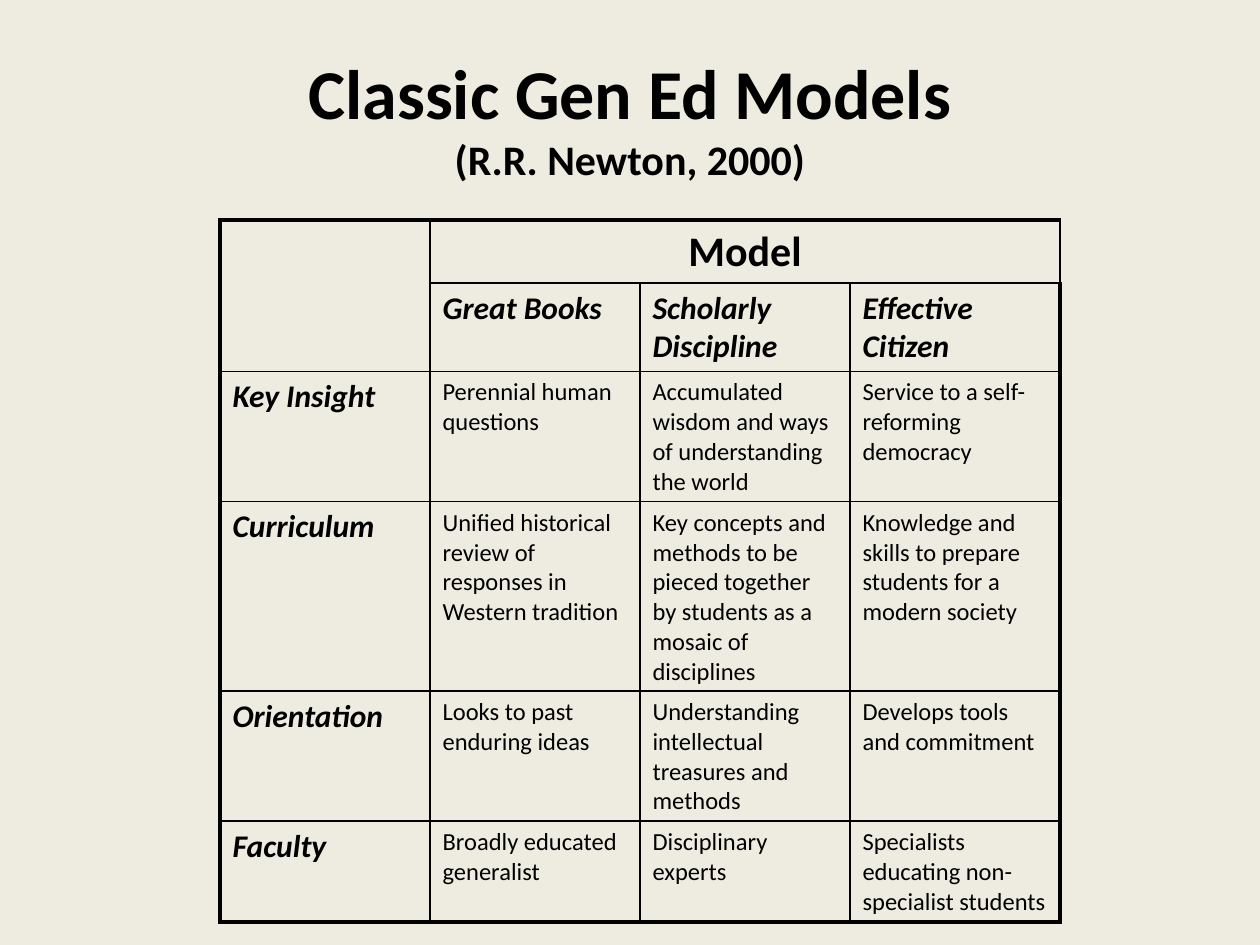
from lxml import etree
from pptx import Presentation
from pptx.dml.color import RGBColor
from pptx.enum.text import MSO_ANCHOR, PP_ALIGN
from pptx.oxml.ns import qn
from pptx.util import Emu, Pt

CENTER, LEFT = PP_ALIGN.CENTER, PP_ALIGN.LEFT
MIDDLE = MSO_ANCHOR.MIDDLE
PX = 914400 // 126
FONT = "Calibri"
COLORS = {"background": "EEECE1", "ink": "000000"}
THIN, THICK = 1, 2.25
COL_WIDTH = 210
ROW_HEIGHTS = [63, 88, 130, 189, 130, 101]
MODELS = [
    ["", "Model", "", ""],
    ["", "Great Books", "Scholarly Discipline", "Effective Citizen"],
    ["Key Insight", "Perennial human questions",
     "Accumulated wisdom and ways of understanding the world",
     "Service to a self-reforming democracy"],
    ["Curriculum", "Unified historical review of responses in Western tradition",
     "Key concepts and methods to be pieced together by students as a mosaic of disciplines",
     "Knowledge and skills to prepare students for a modern society"],
    ["Orientation", "Looks to past enduring ideas",
     "Understanding intellectual treasures and methods",
     "Develops tools and commitment"],
    ["Faculty", "Broadly educated generalist", "Disciplinary experts",
     "Specialists educating non-specialist students"],
]


def px(n):
    """Turn pixels into EMU."""
    return Emu(n * PX)


def rgb(name):
    """Look up a named colour."""
    return RGBColor.from_string(COLORS[name])


def add_run(p, text, size, bold=True, italic=False):
    """Add one formatted run to a paragraph."""
    r = p.add_run()
    r.text = text
    r.font.name, r.font.size = FONT, Pt(size)
    r.font.bold, r.font.italic = bold, italic
    r.font.color.rgb = rgb("ink")


def add_title(s, x, y, w, h):
    """Add the heading and its citation."""
    tf = s.shapes.add_textbox(px(x), px(y), px(w), px(h)).text_frame
    tf.word_wrap = True
    tf.vertical_anchor = MIDDLE
    p = tf.paragraphs[0]
    p.alignment = CENTER
    add_run(p, "Classic Gen Ed Models", 40)
    p.add_line_break()
    add_run(p, "(R.R. Newton, 2000)", 24)


def set_borders(cell, widths):
    """Draw the left, right, top and bottom borders of a cell."""
    tcPr = cell._tc.get_or_add_tcPr()
    for i, (side, width) in enumerate(zip("LRTB", widths)):
        ln = etree.Element(qn(f"a:ln{side}"), w=str(Pt(width)))
        fill = etree.SubElement(ln, qn("a:solidFill"))
        etree.SubElement(fill, qn("a:srgbClr"), val=COLORS["ink"])
        tcPr.insert(i, ln)


def fill_cell(cell, text, row, col):
    """Write a cell in the style of its row and column."""
    cell.fill.background()
    if not text:
        return
    p = cell.text_frame.paragraphs[0]
    p.alignment = CENTER if row == 0 else LEFT
    if row == 0:
        add_run(p, text, 24)
    elif row == 1 or col == 0:
        add_run(p, text, 18, italic=True)
    else:
        add_run(p, text, 14, bold=False)


def add_models_table(s, x, y):
    """Add the table of models with a thick outer frame."""
    rows, cols = len(MODELS), len(MODELS[0])
    frame = s.shapes.add_table(rows, cols, px(x), px(y),
                               px(COL_WIDTH * cols), px(sum(ROW_HEIGHTS)))
    table = frame.table
    table.first_row = table.horz_banding = False
    for column in table.columns:
        column.width = px(COL_WIDTH)
    for row, height in zip(table.rows, ROW_HEIGHTS):
        row.height = px(height)
    table.cell(0, 0).merge(table.cell(1, 0))
    table.cell(0, 1).merge(table.cell(0, cols - 1))
    for i, texts in enumerate(MODELS):
        for j, text in enumerate(texts):
            cell = table.cell(i, j)
            fill_cell(cell, text, i, j)
            outer = (j == 0, j == cols - 1, i == 0, i == rows - 1)
            set_borders(cell, [THICK if edge else THIN for edge in outer])


def main():
    """Build and save the slide."""
    prs = Presentation()
    prs.slide_width, prs.slide_height = px(1260), px(945)
    s = prs.slides.add_slide(prs.slide_layouts[6])
    s.background.fill.solid()
    s.background.fill.fore_color.rgb = rgb("background")
    add_title(s, 63, 38, 1134, 157)
    add_models_table(s, 220, 220)
    prs.save("out.pptx")


if __name__ == "__main__":
    main()
